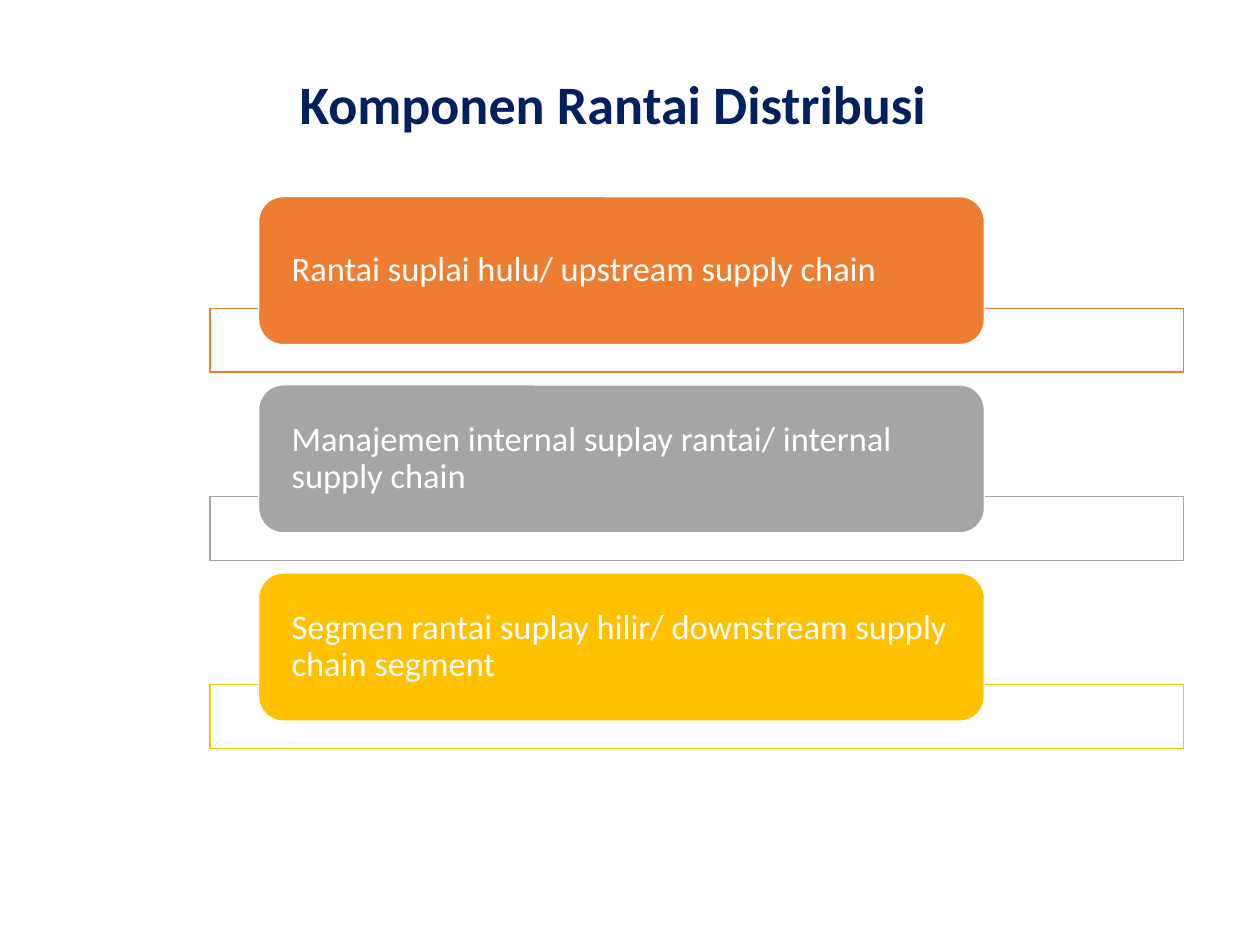
from dataclasses import dataclass

from lxml.etree import SubElement
from pptx import Presentation
from pptx.dml.color import RGBColor
from pptx.enum.shapes import MSO_SHAPE
from pptx.enum.text import MSO_ANCHOR, PP_ALIGN
from pptx.oxml.ns import qn
from pptx.shapes.autoshape import Shape
from pptx.slide import Slide
from pptx.text.text import TextFrame
from pptx.util import Inches, Pt

SLIDE_W, SLIDE_H = Inches(14.22), Inches(10.67)


@dataclass(frozen=True)
class Theme:
    """Colours, font and type sizes of the slide."""
    font: str = "Calibri"
    title_size: int = 44
    body_size: int = 28
    title: str = "002060"
    white: str = "FFFFFF"
    line_spacing: float = 0.9


@dataclass(frozen=True)
class Box:
    """A rectangle in percent of the slide's width and height."""
    left: float
    top: float
    width: float
    height: float

    def down(self, distance: float) -> "Box":
        """Return the same box moved down."""
        return Box(self.left, self.top + distance, self.width, self.height)

    def lengths(self) -> tuple[int, int, int, int]:
        """Return left, top, width and height as slide lengths."""
        return (int(SLIDE_W * self.left / 100), int(SLIDE_H * self.top / 100),
                int(SLIDE_W * self.width / 100), int(SLIDE_H * self.height / 100))


@dataclass(frozen=True)
class Component:
    """One component of the distribution chain."""
    text: str
    color: str


THEME = Theme()
TITLE = Box(23.07, 5.44, 76.93, 11.72)
CARD = Box(20.53, 20.81, 57.59, 15.65)
BAR = Box(16.67, 32.61, 77.29, 6.75)
PITCH = 19.92
COMPONENTS = (
    Component("Rantai suplai hulu/ upstream supply chain", "ED7D31"),
    Component("Manajemen internal suplay rantai/ internal supply chain", "A5A5A5"),
    Component("Segmen rantai suplay hilir/ downstream supply chain segment", "FFC000"),
)


def write(tf: TextFrame, text: str, size: int, color: str, bold: bool = False) -> None:
    """Set left-aligned, vertically centred text."""
    tf.text = text
    tf.word_wrap = True
    tf.vertical_anchor = MSO_ANCHOR.MIDDLE
    p = tf.paragraphs[0]
    p.alignment = PP_ALIGN.LEFT
    p.line_spacing = THEME.line_spacing
    font = p.runs[0].font
    font.name, font.size, font.bold = THEME.font, Pt(size), bold
    font.color.rgb = RGBColor.from_string(color)


def add_block(s: Slide, kind: MSO_SHAPE, box: Box, fill: str, line: str) -> Shape:
    """Add a filled shape with a thin outline."""
    sp = s.shapes.add_shape(kind, *box.lengths())
    sp.shadow.inherit = False
    sp.fill.solid()
    sp.fill.fore_color.rgb = RGBColor.from_string(fill)
    sp.line.color.rgb = RGBColor.from_string(line)
    sp.line.width = Pt(1)
    return sp


def add_component(s: Slide, component: Component, offset: float) -> None:
    """Draw an outlined bar with its rounded card in front."""
    bar = add_block(s, MSO_SHAPE.RECTANGLE, BAR.down(offset), THEME.white, component.color)
    color = bar.fill._xPr.find(qn("a:solidFill"))[0]
    SubElement(color, qn("a:alpha")).set("val", "90000")
    card = add_block(s, MSO_SHAPE.ROUNDED_RECTANGLE, CARD.down(offset),
                     component.color, THEME.white)
    tf = card.text_frame
    tf.margin_left = tf.margin_right = Inches(0.29)
    tf.margin_top = tf.margin_bottom = 0
    write(tf, component.text, THEME.body_size, THEME.white)


def main() -> None:
    """Build and save the slide."""
    prs = Presentation()
    prs.slide_width, prs.slide_height = SLIDE_W, SLIDE_H
    s = prs.slides.add_slide(prs.slide_layouts[5])
    title = s.shapes.title
    title.left, title.top, title.width, title.height = TITLE.lengths()
    write(title.text_frame, "Komponen Rantai Distribusi", THEME.title_size, THEME.title, True)
    for row, component in enumerate(COMPONENTS):
        add_component(s, component, row * PITCH)
    prs.save("out.pptx")


if __name__ == "__main__":
    main()
